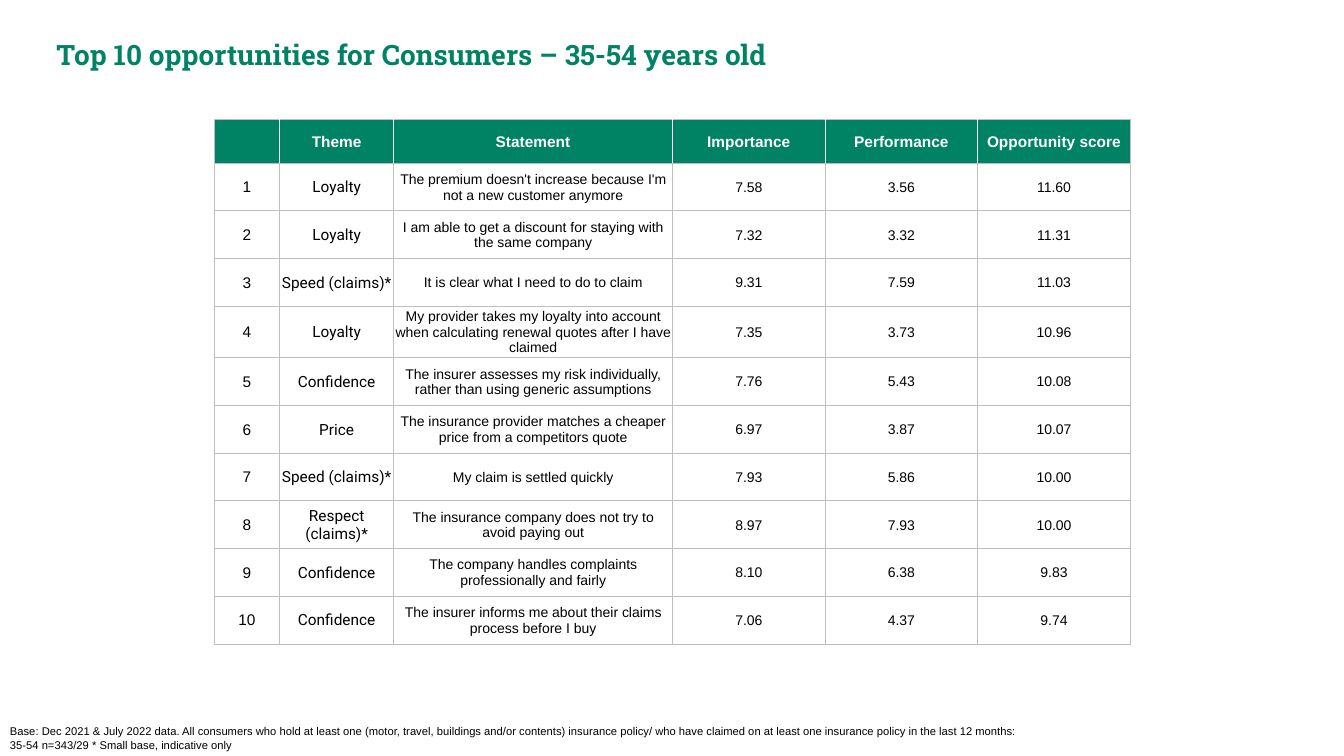
from dataclasses import dataclass

from lxml import etree
from pptx import Presentation
from pptx import util as u
from pptx.dml.color import RGBColor
from pptx.enum import text
from pptx.oxml.ns import qn


@dataclass(frozen=True)
class Theme:
    green: str = "008265"
    white: str = "FFFFFF"
    black: str = "000000"
    grid: str = "BFBFBF"
    heading_font: str = "Roboto Slab"
    theme_font: str = "Roboto"
    body_font: str = "Arial"
    title_size: int = 20
    label_size: int = 11
    body_size: int = 10
    note_size: int = 8


THEME = Theme()
TITLE = "Top 10 opportunities for Consumers – 35-54 years old"
BASE_NOTE = (
    "Base: Dec 2021 & July 2022 data. All consumers who hold at least one "
    "(motor, travel, buildings and/or contents) insurance policy/ who have claimed "
    "on at least one insurance policy in the last 12 months: "
    "35-54 n=343/29 * Small base, indicative only"
)
HEADERS = ["", "Theme", "Statement", "Importance", "Performance", "Opportunity score"]
OPPORTUNITIES = [
    ("Loyalty", "The premium doesn't increase because I'm not a new customer anymore",
     "7.58", "3.56", "11.60"),
    ("Loyalty", "I am able to get a discount for staying with the same company",
     "7.32", "3.32", "11.31"),
    ("Speed (claims)*", "It is clear what I need to do to claim",
     "9.31", "7.59", "11.03"),
    ("Loyalty", "My provider takes my loyalty into account when calculating renewal "
     "quotes after I have claimed", "7.35", "3.73", "10.96"),
    ("Confidence", "The insurer assesses my risk individually, rather than using "
     "generic assumptions", "7.76", "5.43", "10.08"),
    ("Price", "The insurance provider matches a cheaper price from a competitors quote",
     "6.97", "3.87", "10.07"),
    ("Speed (claims)*", "My claim is settled quickly", "7.93", "5.86", "10.00"),
    ("Respect (claims)*", "The insurance company does not try to avoid paying out",
     "8.97", "7.93", "10.00"),
    ("Confidence", "The company handles complaints professionally and fairly",
     "8.10", "6.38", "9.83"),
    ("Confidence", "The insurer informs me about their claims process before I buy",
     "7.06", "4.37", "9.74"),
]
COLUMN_WIDTHS = [46.8, 81.4, 199.2, 109, 109, 109]
HEADER_HEIGHT, ROW_HEIGHT, TALL_ROW_HEIGHT = 31, 34.1, 36.4
TALL_RANK = 4  # its statement takes three lines


def set_all(target, values):
    for name, value in values.items():
        setattr(target, name, value)


def write(paragraph, content, font, size, color, bold=False):
    run = paragraph.add_run()
    run.text = content
    set_all(run.font, {"name": font, "size": u.Pt(size), "bold": bold})
    run.font.color.rgb = RGBColor.from_string(color)


def add_text(slide, box, content, auto_size, **style):
    frame = slide.shapes.add_textbox(*map(u.Pt, box)).text_frame
    set_all(frame, {"word_wrap": True, "auto_size": auto_size})
    write(frame.paragraphs[0], content, **style)


def add_title(slide, box):
    add_text(slide, box, TITLE, text.MSO_AUTO_SIZE.SHAPE_TO_FIT_TEXT,
             font=THEME.heading_font, size=THEME.title_size, color=THEME.green, bold=True)


def add_base_note(slide, box):
    add_text(slide, box, BASE_NOTE, text.MSO_AUTO_SIZE.NONE,
             font=THEME.body_font, size=THEME.note_size, color=THEME.black)


def add_borders(cell, is_header, column):
    """Grid lines all round, with white dividers inside the header row."""
    inner = {"L": column > 0, "R": column < len(HEADERS) - 1, "T": False, "B": False}
    properties = cell._tc.get_or_add_tcPr()
    for side, is_inner in inner.items():
        color, width = (THEME.white, 1) if is_header and is_inner else (THEME.grid, 0.75)
        line = etree.SubElement(properties, qn(f"a:ln{side}"), w=str(u.Pt(width)))
        fill = etree.SubElement(line, qn("a:solidFill"))
        etree.SubElement(fill, qn("a:srgbClr"), val=color)


def cell_style(is_header, column):
    if is_header:
        return {"font": THEME.body_font, "size": THEME.label_size,
                "color": THEME.white, "bold": True}
    return {"font": THEME.theme_font if column == 1 else THEME.body_font,
            "size": THEME.label_size if column < 2 else THEME.body_size,
            "color": THEME.black}


def fill_cell(cell, content, is_header, column):
    inset = u.Pt(0.7)
    set_all(cell, {"margin_left": inset, "margin_right": inset, "margin_top": inset,
                   "margin_bottom": 0, "vertical_anchor": text.MSO_ANCHOR.MIDDLE})
    add_borders(cell, is_header, column)
    if is_header:
        cell.fill.solid()
        cell.fill.fore_color.rgb = RGBColor.from_string(THEME.green)
    else:
        cell.fill.background()
    paragraph = cell.text_frame.paragraphs[0]
    paragraph.alignment = text.PP_ALIGN.CENTER
    if content:
        write(paragraph, content, **cell_style(is_header, column))


def add_opportunity_table(slide, left, top):
    rows = [HEADERS] + [(str(rank), *row) for rank, row in enumerate(OPPORTUNITIES, 1)]
    heights = [HEADER_HEIGHT] + [ROW_HEIGHT] * len(OPPORTUNITIES)
    heights[TALL_RANK] = TALL_ROW_HEIGHT
    box = (left, top, sum(COLUMN_WIDTHS), sum(heights))
    table = slide.shapes.add_table(len(rows), len(HEADERS), *map(u.Pt, box)).table
    set_all(table, {"first_row": False, "horz_banding": False})
    for column, width in zip(table.columns, COLUMN_WIDTHS):
        column.width = u.Pt(width)
    for row_index, (row, height) in enumerate(zip(rows, heights)):
        table.rows[row_index].height = u.Pt(height)
        for column, content in enumerate(row):
            fill_cell(table.cell(row_index, column), content, row_index == 0, column)


def main():
    presentation = Presentation()
    set_all(presentation, {"slide_width": u.Pt(960), "slide_height": u.Pt(540)})
    slide = presentation.slides.add_slide(presentation.slide_layouts[6])
    add_title(slide, (33.2, 23, 884, 31.6))
    add_opportunity_table(slide, 153, 85.6)
    add_base_note(slide, (0, 514, 738, 26))
    presentation.save("out.pptx")


if __name__ == "__main__":
    main()
